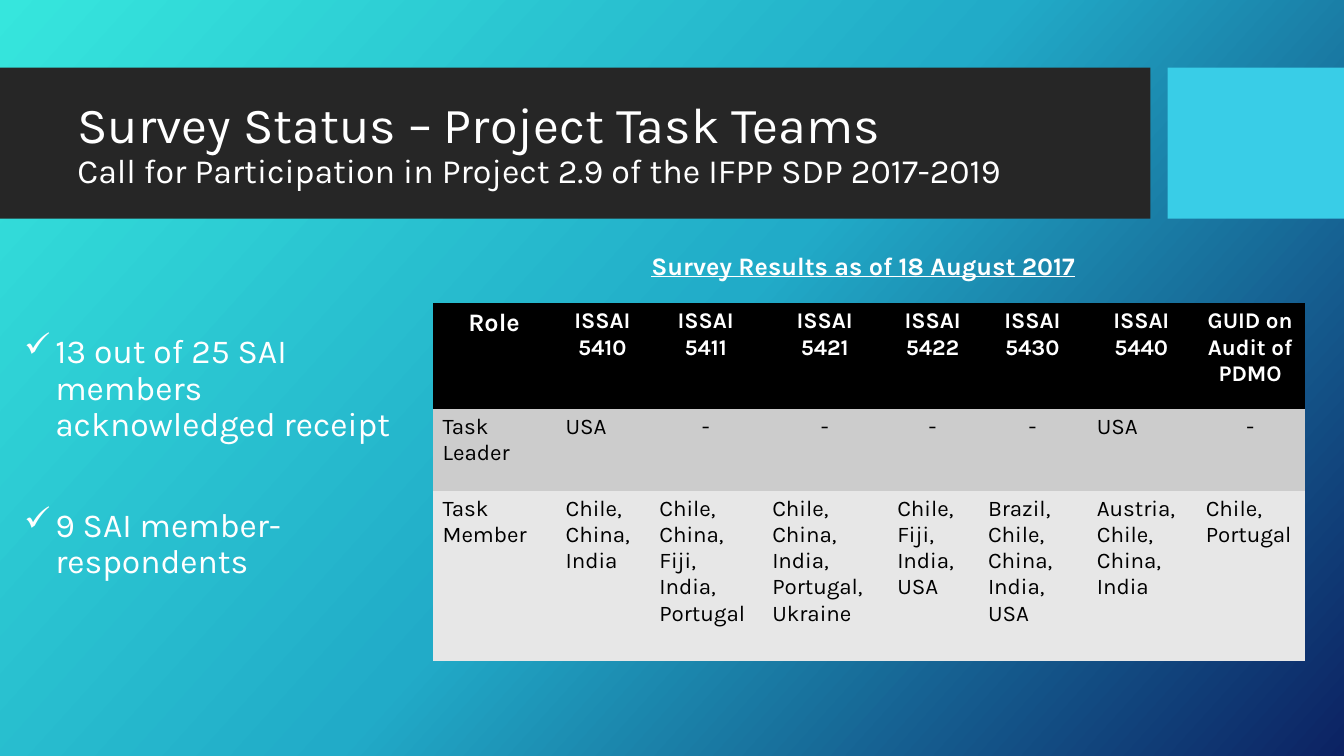
from dataclasses import dataclass

from lxml.etree import SubElement
from pptx import Presentation
from pptx.dml.color import RGBColor
from pptx.enum.shapes import MSO_SHAPE
from pptx.enum.text import MSO_ANCHOR, PP_ALIGN
from pptx.oxml.ns import qn
from pptx.util import Emu, Pt

PX = 9144  # one hundredth of an inch
NO_TABLE_STYLE = "{2D5ABB26-0587-4C30-8999-92F81FD0307C}"


@dataclass(frozen=True)
class Theme:
    font: str = "Karla"
    light: str = "FFFFFF"
    dark: str = "000000"
    band: str = "262626"
    accent: str = "39CDE7"
    row_fills: tuple = ("000000", "CCCCCC", "E7E7E7")
    backdrop: tuple = ((0, "36E6DD"), (50, "21ABC8"), (100, "0C2263"))
    backdrop_angle: int = 42
    title: float = 36
    subtitle: float = 24.3
    body: float = 24
    caption: float = 18
    cell: float = 16


THEME = Theme()

COLUMN_WIDTHS = (122, 93, 112, 124, 90, 108, 108, 108)
ROW_HEIGHTS = (105, 81, 169)
SURVEY = (
    ("Role", "ISSAI 5410", "ISSAI 5411", "ISSAI 5421", "ISSAI 5422",
     "ISSAI 5430", "ISSAI 5440", "GUID on Audit of PDMO"),
    ("Task Leader", "USA", "-", "-", "-", "-", "USA", "-"),
    ("Task Member", "Chile, China, India", "Chile, China, Fiji, India, Portugal",
     "Chile, China, India, Portugal, Ukraine", "Chile, Fiji, India, USA",
     "Brazil, Chile, China, India, USA", "Austria, Chile, China, India",
     "Chile, Portugal"),
)
FINDINGS = ("13 out of 25 SAI members acknowledged receipt",
            "9 SAI member-respondents")


def px(*lengths):
    return [Emu(length * PX) for length in lengths]


def write(para, text, size, color=THEME.light, bold=False, underline=False,
          align=PP_ALIGN.LEFT, spacing=1.0, before=0):
    para.alignment = align
    para.line_spacing = spacing
    para.space_before = Pt(before)
    span = para.add_run()
    span.text = text
    span.font.name = THEME.font
    span.font.size = Pt(size)
    span.font.bold = bold
    span.font.underline = underline
    span.font.color.rgb = RGBColor.from_string(color)


def add_check(para, indent):
    properties = para._p.get_or_add_pPr()
    properties.set("marL", str(indent * PX))
    properties.set("indent", str(-indent * PX))
    SubElement(properties, qn("a:buChar"), char="✓")


def add_text_frame(page, box, anchor=MSO_ANCHOR.TOP):
    frame = page.shapes.add_textbox(*px(*box)).text_frame
    frame.word_wrap = True
    frame.vertical_anchor = anchor
    return frame


def add_panel(page, box, color):
    panel = page.shapes.add_shape(MSO_SHAPE.RECTANGLE, *px(*box))
    panel.shadow.inherit = False
    panel.fill.solid()
    panel.fill.fore_color.rgb = RGBColor.from_string(color)
    panel.line.fill.background()


def paint_backdrop(page):
    fill = page.background.fill
    fill.gradient()
    fill.gradient_angle = 360 - THEME.backdrop_angle
    stops = page.element.find(".//" + qn("a:gsLst"))
    for stop in list(stops):
        stops.remove(stop)
    for percent, color in THEME.backdrop:
        stop = SubElement(stops, qn("a:gs"), pos=str(percent * 1000))
        SubElement(stop, qn("a:srgbClr"), val=color)


def add_header(page, left, top, width, height):
    accent_width, gap = 175, 17
    band_width = width - accent_width - gap
    add_panel(page, (left, top, band_width, height), THEME.band)
    add_panel(page, (left + width - accent_width, top, accent_width, height),
              THEME.accent)
    frame = add_text_frame(page, (left + 67, top + 18, band_width - 90, height - 32),
                           MSO_ANCHOR.MIDDLE)
    para = frame.paragraphs[0]
    write(para, "Survey Status – Project Task Teams", THEME.title, spacing=0.9)
    para.add_line_break()
    write(para, "Call for Participation in Project 2.9 of the IFPP SDP 2017-2019",
          THEME.subtitle, spacing=0.9)


def add_findings(page, left, top, width, height):
    frame = add_text_frame(page, (left, top, width, height), MSO_ANCHOR.MIDDLE)
    for index, finding in enumerate(FINDINGS):
        para = frame.add_paragraph() if index else frame.paragraphs[0]
        add_check(para, 31)
        write(para, finding, THEME.body, spacing=0.9, before=46 if index else 0)


def add_results(page, left, top, width, height):
    """Place the caption and, below it, the table of survey answers."""
    caption = add_text_frame(page, (left + 36, top, width - 83, 40))
    write(caption.paragraphs[0], "Survey Results as of 18 August 2017", THEME.caption,
          bold=True, underline=True, align=PP_ALIGN.CENTER)

    frame = page.shapes.add_table(len(ROW_HEIGHTS), len(COLUMN_WIDTHS),
                                  *px(left, top + 58, width, height - 58))
    table = frame.table
    table.first_row = table.horz_banding = False
    table._tbl.tblPr.find(qn("a:tableStyleId")).text = NO_TABLE_STYLE
    for column, length in zip(table.columns, px(*COLUMN_WIDTHS)):
        column.width = length
    for row, length in zip(table.rows, px(*ROW_HEIGHTS)):
        row.height = length

    for row_index, answers in enumerate(SURVEY):
        heading = row_index == 0
        for column_index, answer in enumerate(answers):
            cell = table.cell(row_index, column_index)
            cell.fill.solid()
            cell.fill.fore_color.rgb = RGBColor.from_string(THEME.row_fills[row_index])
            centred = heading or answer == "-"
            write(cell.text_frame.paragraphs[0], answer,
                  THEME.caption if answer == "Role" else THEME.cell,
                  color=THEME.light if heading else THEME.dark, bold=heading,
                  align=PP_ALIGN.CENTER if centred else PP_ALIGN.LEFT)


def main():
    deck = Presentation()
    deck.slide_width, deck.slide_height = px(1333, 750)
    page = deck.slides.add_slide(deck.slide_layouts[6])
    paint_backdrop(page)
    add_header(page, 0, 67, 1333, 150)
    add_findings(page, 14, 257, 414, 394)
    add_results(page, 429, 243, sum(COLUMN_WIDTHS), 58 + sum(ROW_HEIGHTS))
    deck.save("out.pptx")


if __name__ == "__main__":
    main()
